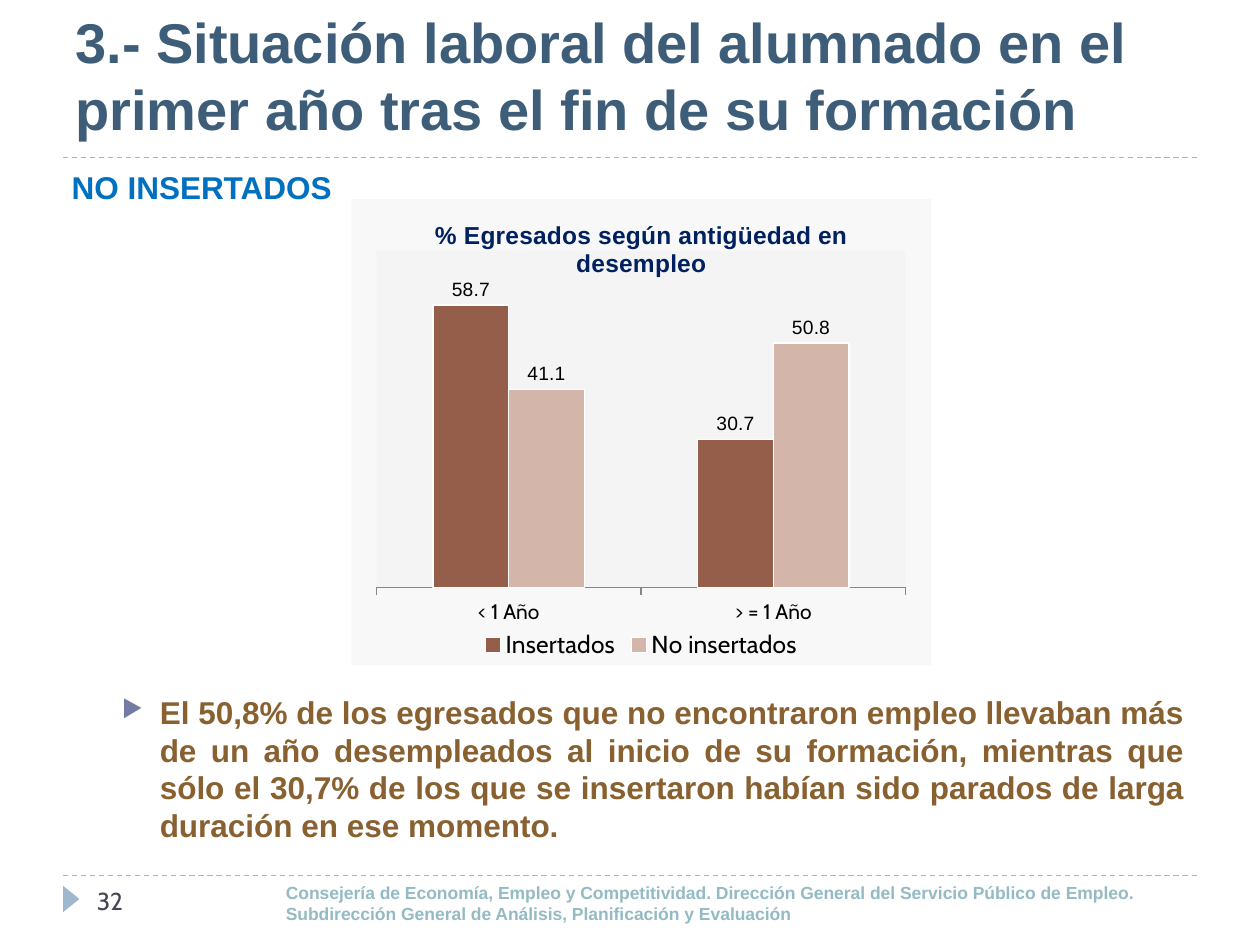
from dataclasses import dataclass

from lxml.etree import SubElement
from pptx import Presentation
from pptx.chart.data import CategoryChartData
from pptx.dml.color import RGBColor
from pptx.enum.chart import XL_CHART_TYPE as ChartType
from pptx.enum.chart import XL_LABEL_POSITION as LabelPosition
from pptx.enum.chart import XL_LEGEND_POSITION as LegendPosition
from pptx.enum.chart import XL_TICK_LABEL_POSITION as TickLabels
from pptx.enum.chart import XL_TICK_MARK as TickMark
from pptx.enum.dml import MSO_LINE as LineStyle
from pptx.enum.shapes import MSO_CONNECTOR as Connector
from pptx.enum.shapes import MSO_SHAPE as Shape
from pptx.enum.text import MSO_ANCHOR as Anchor
from pptx.enum.text import PP_ALIGN as Align
from pptx.oxml import parse_xml
from pptx.oxml.ns import nsdecls, qn
from pptx.util import Inches, Pt


@dataclass(frozen=True)
class Theme:
    heading_font: str = "Arial"
    body_font: str = "Cabin"
    title: str = "3E5D78"
    section: str = "0070C0"
    body: str = "89602F"
    bullet: str = "727CA3"
    footer: str = "94BAC3"
    number: str = "464653"
    rule: str = "9FB8CD"
    chart_title: str = "002060"
    panel: str = "F2F2F2"
    axis: str = "868686"
    black: str = "000000"
    white: str = "FFFFFF"
    title_size: int = 32
    body_size: int = 18
    legend_size: int = 14
    category_size: int = 12
    label_size: int = 11
    small_size: int = 10


@dataclass(frozen=True)
class Series:
    name: str
    values: tuple[float, ...]
    color: str


THEME = Theme()
CATEGORIES = ("< 1 Año", "> = 1 Año")
SERIES = (
    Series("Insertados", (58.7, 30.7), "955E4B"),
    Series("No insertados", (41.1, 50.8), "D4B5AA"),
)


def rgb(color: str) -> RGBColor:
    return RGBColor.from_string(color)


def style_font(font, size: int, color: str = THEME.black,
               name: str = THEME.heading_font, bold: bool = False) -> None:
    font.size, font.name, font.bold = Pt(size), name, bold
    font.color.rgb = rgb(color)


def add_bullet(para, indent: float, hanging: float) -> None:
    props = para._p.get_or_add_pPr()
    props.set("marL", str(Inches(indent)))
    props.set("indent", str(Inches(-hanging)))
    color = SubElement(props, qn("a:buClr"))
    SubElement(color, qn("a:srgbClr"), val=THEME.bullet)
    SubElement(props, qn("a:buSzPct"), val="76000")
    SubElement(props, qn("a:buChar"), char="▶")


def add_text(page, text: str, left: float, top: float, width: float, height: float, *,
             size: int, color: str, font: str = THEME.heading_font, bold: bool = True,
             anchor=Anchor.MIDDLE, align=Align.LEFT, margin_top: float = 0.05,
             bullet: bool = False) -> None:
    box = page.shapes.add_textbox(Inches(left), Inches(top), Inches(width), Inches(height))
    frame = box.text_frame
    frame.word_wrap = True
    frame.vertical_anchor = anchor
    frame.margin_top = Inches(margin_top)
    frame.text = text
    for para in frame.paragraphs:
        para.alignment = align
        if bullet:
            add_bullet(para, indent=0.5, hanging=0.3)
        for span in para.runs:
            style_font(span.font, size, color, font, bold)


def add_rule(page, top: float) -> None:
    rule = page.shapes.add_connector(
        Connector.STRAIGHT, Inches(0.5), Inches(top), Inches(9.5), Inches(top))
    rule.line.color.rgb = rgb(THEME.rule)
    rule.line.width = Pt(0.75)
    rule.line.dash_style = LineStyle.DASH
    SubElement(rule._element.spPr, qn("a:effectLst"))


def add_marker(page) -> None:
    marker = page.shapes.add_shape(
        Shape.ISOSCELES_TRIANGLE, Inches(0.46), Inches(7.07), Inches(0.21), Inches(0.13))
    marker.rotation = 90
    marker.shadow.inherit = False
    marker.fill.solid()
    marker.fill.fore_color.rgb = rgb(THEME.rule)
    marker.line.fill.background()


def panel_fill():
    """Half-transparent fill, without outline, for the chart and its plot area."""
    return parse_xml(
        f'<c:spPr {nsdecls("c", "a")}><a:solidFill><a:srgbClr val="{THEME.panel}">'
        '<a:alpha val="50000"/></a:srgbClr></a:solidFill><a:ln><a:noFill/></a:ln></c:spPr>')


def style_panels(chart) -> None:
    plot_area = chart._chartSpace.chart.plotArea
    plot_area.append(panel_fill())
    chart._chartSpace.chart.addnext(panel_fill())
    for old in plot_area.findall(qn("c:layout")):
        plot_area.remove(old)
    layout = parse_xml(
        f'<c:layout {nsdecls("c")}><c:manualLayout><c:layoutTarget val="inner"/>'
        '<c:xMode val="edge"/><c:yMode val="edge"/><c:x val="0.043"/><c:y val="0.111"/>'
        '<c:w val="0.913"/><c:h val="0.722"/></c:manualLayout></c:layout>')
    plot_area.insert(0, layout)


def add_unemployment_chart(page) -> None:
    data = CategoryChartData(number_format="0.0")
    data.categories = CATEGORIES
    for item in SERIES:
        data.add_series(item.name, item.values)
    chart = page.shapes.add_chart(
        ChartType.COLUMN_CLUSTERED, Inches(2.79), Inches(1.58), Inches(4.6), Inches(3.7),
        data).chart
    style_font(chart.font, THEME.small_size, name=THEME.body_font)

    # Title and legend
    title = chart.chart_title
    title.text_frame.text = "% Egresados según antigüedad en desempleo"
    style_font(title.text_frame.paragraphs[0].runs[0].font, THEME.legend_size,
               THEME.chart_title, bold=True)
    title._element.get_or_add_overlay().set("val", "1") if hasattr(
        title._element, "get_or_add_overlay") else SubElement(
        title._element, qn("c:overlay"), val="1")
    chart.has_legend = True
    chart.legend.position = LegendPosition.BOTTOM
    chart.legend.include_in_layout = False
    style_font(chart.legend.font, THEME.legend_size, name=THEME.body_font)

    # Axes
    categories, values = chart.category_axis, chart.value_axis
    categories.major_tick_mark = TickMark.OUTSIDE
    categories.tick_label_position = TickLabels.LOW
    categories.format.line.color.rgb = rgb(THEME.axis)
    style_font(categories.tick_labels.font, THEME.category_size, name=THEME.body_font)
    values.visible = False
    values.has_major_gridlines = False
    values.minimum_scale, values.maximum_scale = 0, 70

    # Columns and their labels
    plot = chart.plots[0]
    plot.vary_by_categories = False
    plot.gap_width, plot.overlap = 150, 0
    for item, column in zip(SERIES, plot.series):
        column.format.fill.solid()
        column.format.fill.fore_color.rgb = rgb(item.color)
        column.format.line.color.rgb = rgb(THEME.white)
        column.format.line.width = Pt(0.75)
        labels = column.data_labels
        labels.show_value = True
        labels.number_format, labels.number_format_is_linked = "0.0", False
        labels.position = LabelPosition.OUTSIDE_END
        style_font(labels.font, THEME.label_size)
    style_panels(chart)


def main() -> None:
    deck = Presentation()
    deck.slide_width, deck.slide_height = Inches(10), Inches(7.5)
    page = deck.slides.add_slide(deck.slide_layouts[6])

    # Rules and footer
    for top in (6.95, 1.25):
        add_rule(page, top)
    add_marker(page)
    add_text(page, "Consejería de Economía, Empleo y Competitividad. Dirección General del "
             "Servicio Público de Empleo.\nSubdirección General de Análisis, Planificación "
             "y Evaluación", 2.17, 6.95, 7.21, 0.44, size=THEME.small_size, color=THEME.footer)
    add_text(page, "32", 0.67, 6.95, 1.4, 0.4, size=THEME.legend_size, color=THEME.number,
             font=THEME.body_font, bold=False)

    # Headings
    add_text(page, "NO INSERTADOS", 0.47, 1.18, 2.32, 0.68, size=THEME.body_size,
             color=THEME.section, anchor=Anchor.TOP, margin_top=0.15)
    add_text(page, "3.- Situación laboral del alumnado en el primer año tras el fin de su "
             "formación", 0.5, 0, 9, 1.18, size=THEME.title_size, color=THEME.title)

    # Finding and chart
    add_text(page, "El 50,8% de los egresados que no encontraron empleo llevaban más de un año "
             "desempleados al inicio de su formación, mientras que sólo el 30,7% de los que se "
             "insertaron habían sido parados de larga duración en ese momento.",
             0.67, 5.45, 8.83, 1.3, size=THEME.body_size, color=THEME.body,
             anchor=Anchor.TOP, align=Align.JUSTIFY, bullet=True)
    add_unemployment_chart(page)
    deck.save("out.pptx")


if __name__ == "__main__":
    main()
